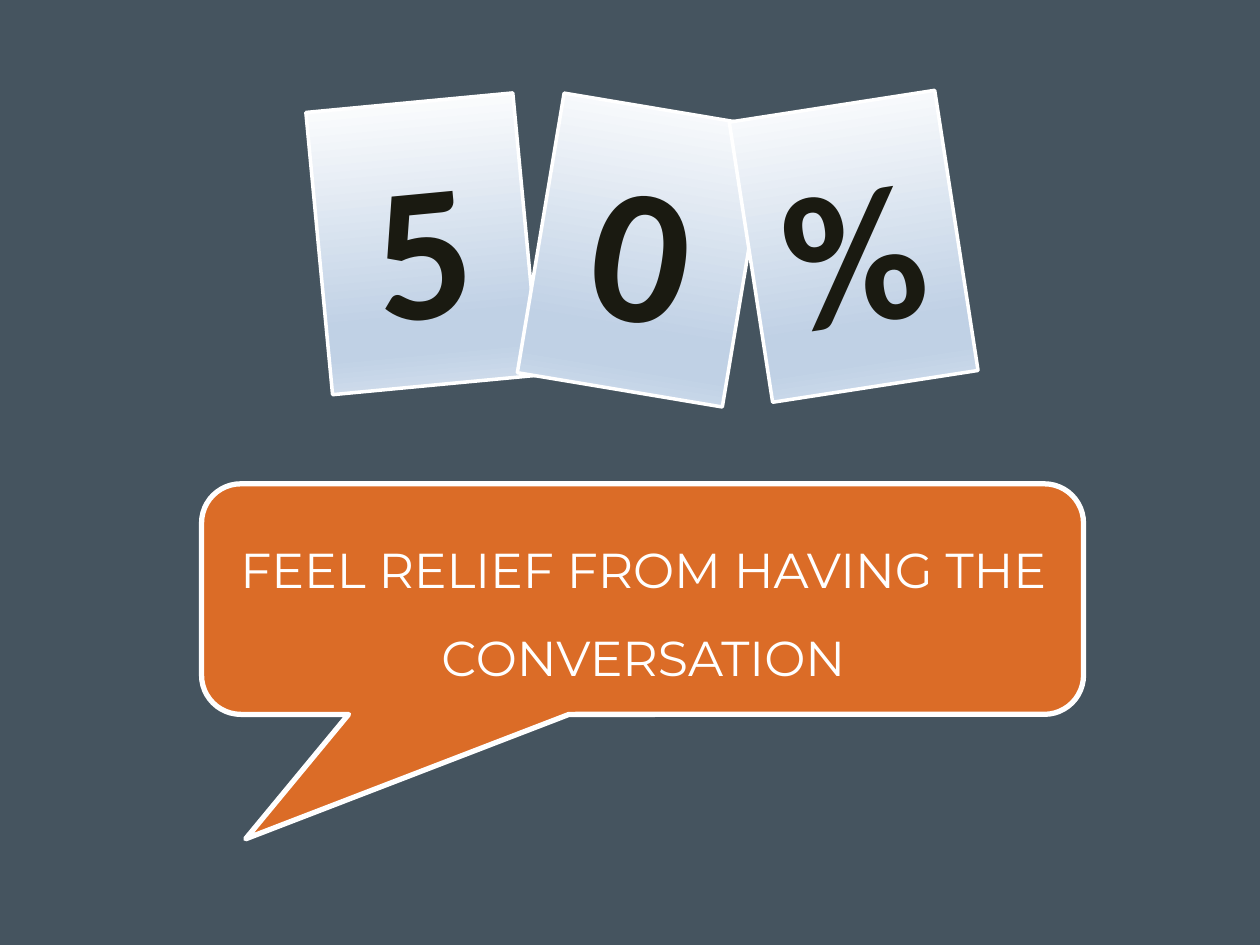
from lxml.etree import SubElement
from pptx import Presentation
from pptx.dml.color import RGBColor
from pptx.enum.shapes import MSO_SHAPE
from pptx.enum.text import MSO_ANCHOR, MSO_AUTO_SIZE, PP_ALIGN
from pptx.oxml.ns import qn
from pptx.util import Inches, Pt


def color(value):
    return RGBColor.from_string(value)


class SlideStyle:
    white, ink, orange, slate = "FFFFFF", "1A1A11", "DB6C27", "45545F"
    card_stops = ((0, "FFFFFF"), (74, "C0D1E5"), (83, "C0D1E5"), (100, "D5E0EE"))
    digit_font = {"name": "Calibri", "size": Pt(110), "bold": True}
    message_font = {"name": "Montserrat", "size": Pt(28), "bold": False}
    frame_format = {"word_wrap": True, "auto_size": MSO_AUTO_SIZE.SHAPE_TO_FIT_TEXT,
                    "vertical_anchor": MSO_ANCHOR.TOP}

    def __init__(self, deck):
        self.deck = deck
        self.page = deck.slides.add_slide(deck.slide_layouts[5])
        background = self.page.background.fill
        background.solid()
        background.fore_color.rgb = color(self.slate)

    def area(self, left, top, width, height):
        across, down = self.deck.slide_width, self.deck.slide_height
        return [int(share * side) for share, side in
                zip((left, top, width, height), (across, down, across, down))]

    def outlined(self, preset, area, line_width):
        shape = self.page.shapes.add_shape(preset, *self.area(*area))
        shape.shadow.inherit = False
        shape.line.color.rgb = color(self.white)
        shape.line.width = Pt(line_width)
        return shape

    def card(self, area, rotation):
        card = self.outlined(MSO_SHAPE.RECTANGLE, area, 2)
        card.rotation = rotation
        card.fill.gradient()
        card.fill.gradient_angle = 270
        stops = card._element.spPr.find(qn("a:gradFill")).find(qn("a:gsLst"))
        for stop in list(stops):
            stops.remove(stop)
        for percent, value in self.card_stops:
            stop = SubElement(stops, qn("a:gs"), pos=str(percent * 1000))
            SubElement(stop, qn("a:srgbClr"), val=value)

    def set_text(self, box, text, font, value, spacing=1.0):
        for name, setting in self.frame_format.items():
            setattr(box.text_frame, name, setting)
        para = box.text_frame.paragraphs[0]
        para.alignment = PP_ALIGN.CENTER
        para.line_spacing = spacing
        span = para.add_run()
        span.text = text
        for name, setting in font.items():
            setattr(span.font, name, setting)
        span.font.color.rgb = color(value)

    def digit(self, text, area, rotation):
        box = self.page.shapes.add_textbox(*self.area(*area))
        box.rotation = rotation
        self.set_text(box, text, self.digit_font, self.ink)

    def callout(self, area, adjustments):
        bubble = self.outlined(MSO_SHAPE.ROUNDED_RECTANGULAR_CALLOUT, area, 3)
        bubble.fill.solid()
        bubble.fill.fore_color.rgb = color(self.orange)
        for index, value in enumerate(adjustments):
            bubble.adjustments[index] = value

    def message(self, text, area):
        title = self.page.shapes.title
        title.left, title.top, title.width, title.height = self.area(*area)
        self.page.shapes._spTree.append(title._element)
        self.set_text(title, text, self.message_font, self.white, 1.5)


def main():
    deck = Presentation()
    deck.slide_width, deck.slide_height = Inches(10), Inches(7.5)
    slide = SlideStyle(deck)
    cards = (("5", 2.53, 0.81, 0.96, 354.6),
             ("0", 4.28, 0.86, 0.98, 9.5),
             ("%", 5.95, 0.83, 1.0, 351.2))
    for text, left, card_top, text_top, rotation in cards:
        slide.card((left / 10, card_top / 7.5, 0.165, 0.3), rotation)
        slide.digit(text, (left / 10, text_top / 7.5, 0.165, 0.26), rotation)
    slide.callout((0.16, 3.84 / 7.5, 0.7, 1.83 / 7.5), (-0.45, 1.04, 0.17))
    slide.message("FEEL RELIEF FROM HAVING THE CONVERSATION",
                  (0.169, 4 / 7.5, 0.683, 1.51 / 7.5))
    deck.save("out.pptx")


if __name__ == "__main__":
    main()
